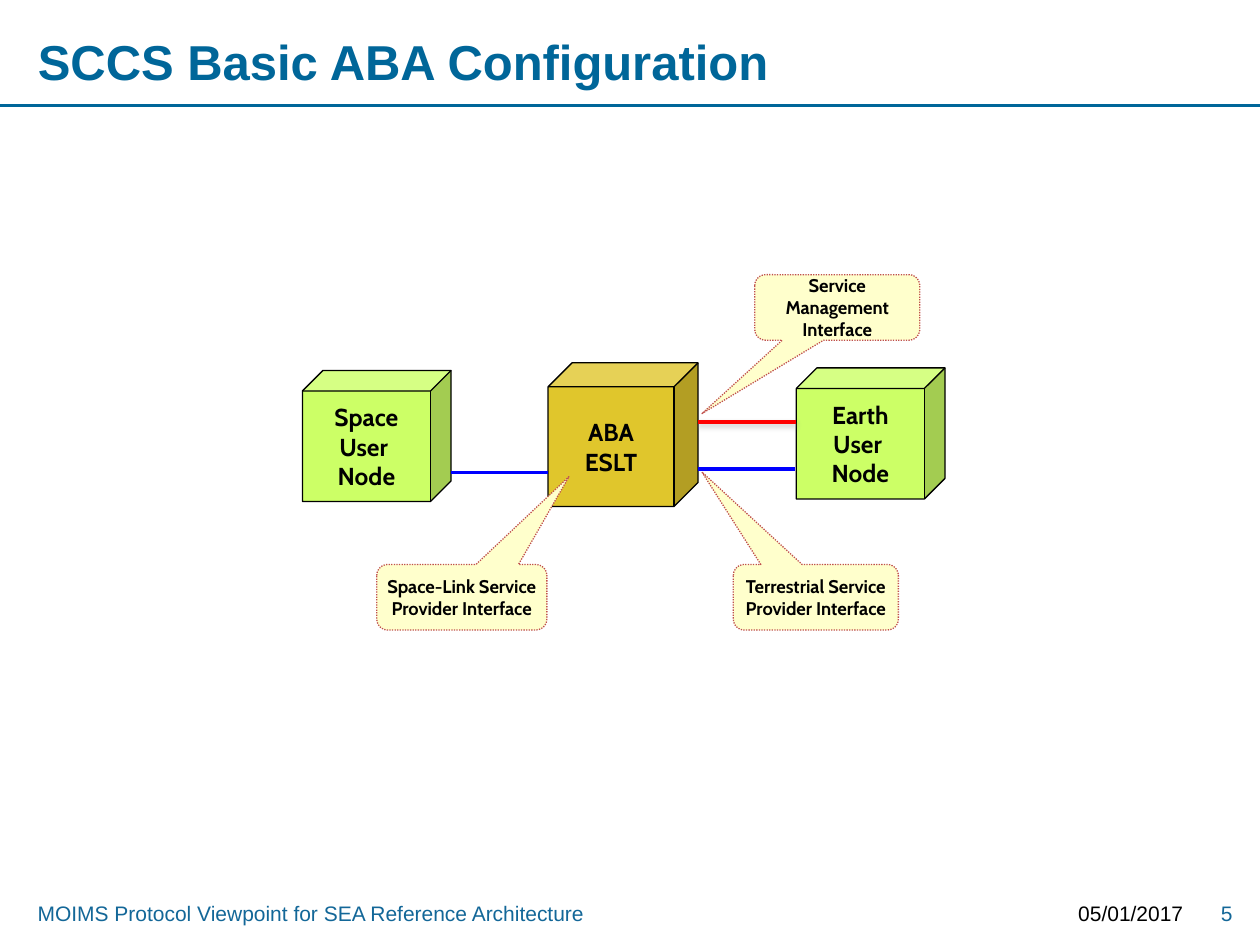
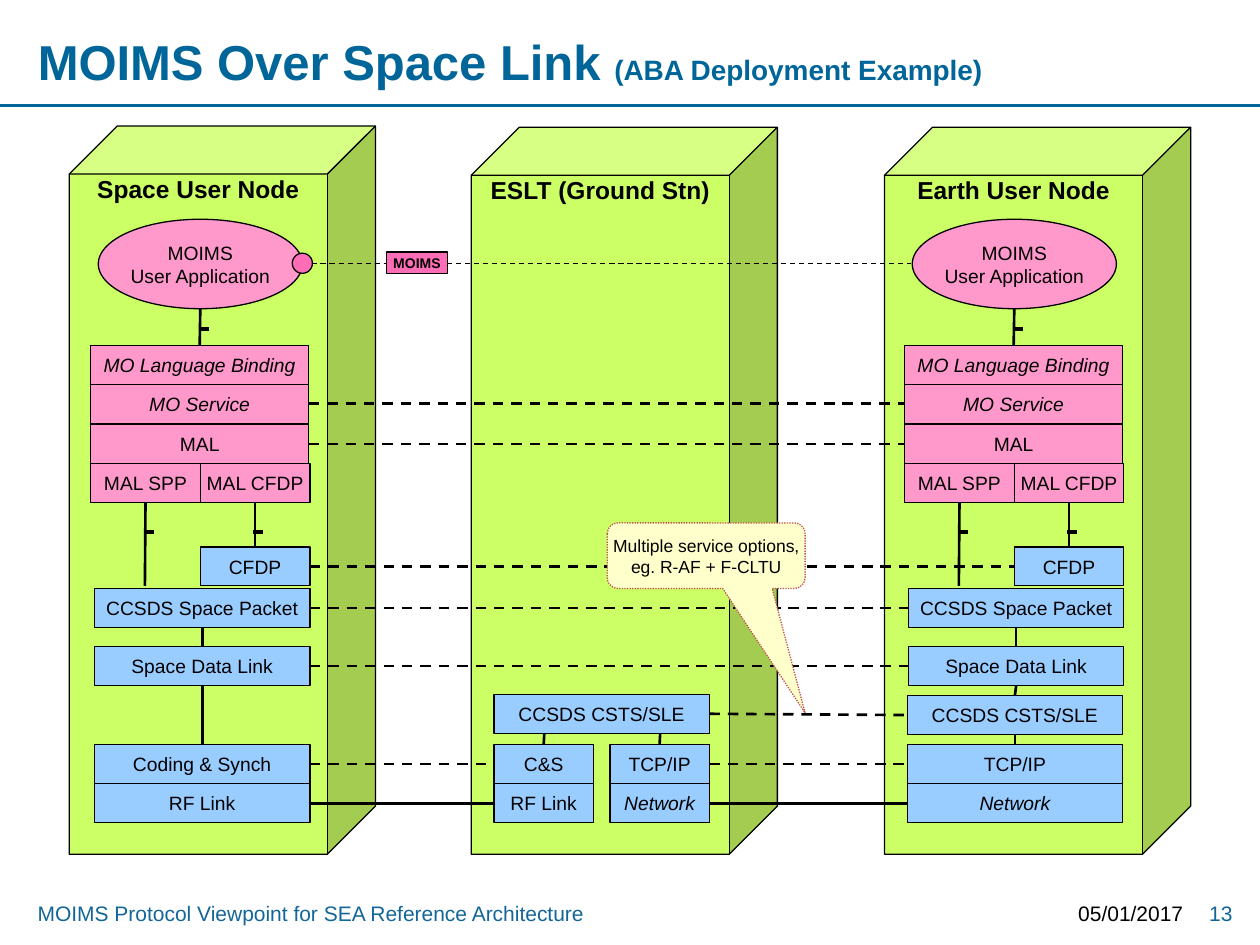
"""Build two slides on the ABA configuration and the MOIMS protocol stacks over a space link."""
from dataclasses import dataclass, replace
from typing import NamedTuple, Optional

from pptx import Presentation
from pptx.dml.color import RGBColor
from pptx.enum.dml import MSO_LINE as Dash
from pptx.enum.shapes import MSO_CONNECTOR, MSO_SHAPE as Preset
from pptx.enum.text import MSO_ANCHOR as Anchor, MSO_AUTO_SIZE as AutoSize, PP_ALIGN as Align
from pptx.oxml import parse_xml
from pptx.oxml.ns import nsdecls
from pptx.shapes.autoshape import Shape
from pptx.shapes.connector import Connector
from pptx.slide import Slide
from pptx.text.text import TextFrame
from pptx.util import Inches, Pt

COLORS = {
    "title": "006699", "footer": "136798", "ink": "000000", "lime": "CCFF66",
    "gold": "E0C62C", "pink": "FF99CC", "hot_pink": "FF6DB6", "sky": "99CCFF",
    "note": "FFFFCC", "note_line": "C0504D", "blue": "0000FF", "red": "FF0000",
}
TOP, LEFT, BOTTOM, RIGHT = range(4)
ROW = 0.31
FULL, LOWER, HALF, SMALL = 1.73, 1.71, 0.87, 0.79
EARTH_SHIFT = 6.46
RED_SHADOW = (
    '<a:outerShdw blurRad="39370" dist="20320" dir="5400000" rotWithShape="0">'
    '<a:srgbClr val="808080"><a:alpha val="38000"/></a:srgbClr></a:outerShdw>'
)


class Area(NamedTuple):
    left: float
    top: float
    width: float
    height: float


class Point(NamedTuple):
    x: float
    y: float


@dataclass(frozen=True)
class Font:
    size: float
    name: str = "Arial"
    color: str = "ink"
    bold: bool = False
    italic: bool = False


@dataclass(frozen=True)
class Pen:
    color: str = "ink"
    width: float = 1.5
    dash: Optional[Dash] = None


@dataclass(frozen=True)
class Look:
    preset: Preset
    fill: str
    font: Font
    pen: Pen = Pen(width=0.75)
    insets: tuple[float, float] = (0.1, 0.05)
    anchor: Anchor = Anchor.MIDDLE
    wrap: bool = True
    adjustments: tuple[float, ...] = ()


class Block(NamedTuple):
    label: str
    left: float
    top: float
    width: float
    fill: str = "sky"
    italic: bool = False


TITLE_FONT = Font(28, color="title", bold=True)
FOOTER_FONT = Font(12, color="footer")
CUBE = Look(Preset.CUBE, "lime", Font(14, "Cabin", bold=True), wrap=False, adjustments=(0.157,))
TOWER = replace(CUBE, font=Font(14, bold=True), insets=(0.1, 0), anchor=Anchor.TOP)
APPLICATION = Look(Preset.OVAL, "pink", Font(11), insets=(0, 0.05))
BLOCK = Look(Preset.RECTANGLE, "sky", Font(11), insets=(0.02, 0.02))
NOTE = Look(Preset.ROUNDED_RECTANGULAR_CALLOUT, "note", Font(10.5, "Cabin", bold=True),
            Pen("note_line", 0.75, Dash.ROUND_DOT), (0, 0))
SOLID = Pen()
DASHED = Pen(dash=Dash.DASH)
TICK = Pen(width=2.25)

USER_BLOCKS = (
    Block("MO Language Binding", 0.72, 2.74, FULL, "pink", True),
    Block("MO Service", 0.72, 3.05, FULL, "pink", True),
    Block("MAL", 0.72, 3.37, FULL, "pink"),
    Block("MAL SPP", 0.72, 3.68, HALF, "pink"),
    Block("MAL CFDP", 1.59, 3.68, HALF, "pink"),
    Block("CFDP", 1.59, 4.34, HALF),
    Block("CCSDS Space Packet", 0.75, 4.67, LOWER),
    Block("Space Data Link", 0.75, 5.13, LOWER),
)
SPACE_BLOCKS = (
    Block("Coding & Synch", 0.75, 5.91, LOWER),
    Block("RF Link", 0.75, 6.22, LOWER),
)
GROUND_BLOCKS = (
    Block("CCSDS CSTS/SLE", 3.92, 5.51, LOWER),
    Block("C&S", 3.92, 5.91, SMALL),
    Block("RF Link", 3.92, 6.22, SMALL),
    Block("TCP/IP", 4.84, 5.91, SMALL),
    Block("Network", 4.84, 6.22, SMALL, italic=True),
)
EARTH_BLOCKS = (
    Block("CCSDS CSTS/SLE", 7.2, 5.52, LOWER),
    Block("TCP/IP", 7.2, 5.91, LOWER),
    Block("Network", 7.2, 6.22, LOWER, italic=True),
)


def rgb(name: str) -> RGBColor:
    return RGBColor.from_string(COLORS[name])


def add_span(para, text: str, font: Font) -> None:
    span = para.add_run()
    span.text = text
    span.font.name, span.font.size = font.name, Pt(font.size)
    span.font.bold, span.font.italic = font.bold, font.italic
    span.font.color.rgb = rgb(font.color)


def write(frame: TextFrame, paragraphs: tuple[str, ...], font: Font, align: Align) -> None:
    for index, text in enumerate(paragraphs):
        para = frame.add_paragraph() if index else frame.paragraphs[0]
        para.alignment = align
        for number, line in enumerate(text.split("\n")):
            if number:
                para.add_line_break()
            add_span(para, line, font)


def apply_pen(line, pen: Pen) -> None:
    line.color.rgb = rgb(pen.color)
    line.width = Pt(pen.width)
    if pen.dash is not None:
        line.dash_style = pen.dash


def draw_shape(page: Slide, area: Area, look: Look, *paragraphs: str) -> Shape:
    shape = page.shapes.add_shape(look.preset, *map(Inches, area))
    shape.shadow.inherit = False
    shape.fill.solid()
    shape.fill.fore_color.rgb = rgb(look.fill)
    apply_pen(shape.line, look.pen)
    for index, value in enumerate(look.adjustments):
        shape.adjustments[index] = value
    frame = shape.text_frame
    frame.word_wrap, frame.vertical_anchor = look.wrap, look.anchor
    frame.margin_left = frame.margin_right = Inches(look.insets[0])
    frame.margin_top = frame.margin_bottom = Inches(look.insets[1])
    write(frame, paragraphs, look.font, Align.CENTER)
    return shape


def draw_note(page: Slide, area: Area, tip: Point, *paragraphs: str, font: Font = NOTE.font) -> None:
    look = replace(NOTE, font=font, adjustments=(tip.x, tip.y, 0.167))
    draw_shape(page, area, look, *paragraphs)


def draw_line(page: Slide, start: Point, end: Point, pen: Pen, effect: str = "") -> Connector:
    line = page.shapes.add_connector(MSO_CONNECTOR.STRAIGHT, *map(Inches, (*start, *end)))
    apply_pen(line.line, pen)
    effects = f'<a:effectLst {nsdecls("a")}>{effect}</a:effectLst>'
    line._element.spPr.append(parse_xml(effects))
    return line


def join(page: Slide, first: Shape, last: Shape, pen: Pen, sites: tuple[int, int]) -> None:
    line = draw_line(page, Point(0, 0), Point(1, 1), pen)
    line.begin_connect(first, sites[0])
    line.end_connect(last, sites[1])


def draw_footer(page: Slide, area: Area, text: str, font: Font, align: Align) -> None:
    box = page.shapes.add_textbox(*map(Inches, area))
    box.text_frame.word_wrap = True
    write(box.text_frame, (text,), font, align)


def start_page(deck, number: str, title: str, subtitle: str = "") -> Slide:
    page = deck.slides.add_slide(deck.slide_layouts[5])
    box = page.shapes.title
    box.left, box.top, box.width, box.height = map(Inches, (0.2, 0.21, 7.95, 0.55))
    frame = box.text_frame
    frame.word_wrap, frame.auto_size = True, AutoSize.NONE
    frame.vertical_anchor = Anchor.MIDDLE
    write(frame, (title,), TITLE_FONT, Align.LEFT)
    if subtitle:
        add_span(frame.paragraphs[0], subtitle, replace(TITLE_FONT, size=16))
    draw_line(page, Point(0, 0.84), Point(10, 0.84), Pen("title"))
    draw_footer(page, Area(0.2, 7.1, 8.11, 0.3),
                "MOIMS Protocol Viewpoint for SEA Reference Architecture", FOOTER_FONT, Align.LEFT)
    draw_footer(page, Area(8.39, 7.1, 1.1, 0.3), "05/01/2017", Font(12), Align.RIGHT)
    draw_footer(page, Area(9.41, 7.1, 0.47, 0.3), number, FOOTER_FONT, Align.RIGHT)
    return page


def build_configuration(deck) -> None:
    page = start_page(deck, "5", "SCCS Basic ABA Configuration")
    draw_shape(page, Area(2.4, 2.94, 1.18, 1.04), CUBE, "Space\nUser ", "Node")
    draw_shape(page, Area(4.35, 2.88, 1.19, 1.14),
               replace(CUBE, fill="gold", adjustments=(0.167,)), "ABA", "ESLT")
    draw_shape(page, Area(6.32, 2.92, 1.18, 1.04), CUBE, "Earth\nUser ", "Node")
    for left, y in ((3.58, 3.75), (5.54, 3.72)):
        draw_line(page, Point(left, y), Point(left + 0.77, y), Pen("blue", 2.25))
    draw_line(page, Point(6.32, 3.35), Point(5.54, 3.35), Pen("red", 2.25), RED_SHADOW)
    draw_note(page, Area(5.82, 4.48, 1.31, 0.52), Point(-0.69, -1.91),
              "Terrestrial Service Provider Interface")
    draw_note(page, Area(2.99, 4.48, 1.35, 0.52), Point(0.63, -1.84),
              "Space-Link Service Provider Interface")
    draw_note(page, Area(5.99, 2.18, 1.31, 0.52), Point(-0.82, 1.62),
              "Service", "Management", "Interface")


def draw_blocks(page: Slide, blocks: tuple[Block, ...], shift: float = 0) -> dict[str, Shape]:
    return {
        block.label: draw_shape(
            page, Area(block.left + shift, block.top, block.width, ROW),
            replace(BLOCK, fill=block.fill, font=Font(11, italic=block.italic)), block.label)
        for block in blocks
    }


def draw_user_stack(page: Slide, shift: float, lower: tuple[Block, ...]) -> dict[str, Shape]:
    draw_shape(page, Area(0.78 + shift, 1.74, 1.62, 0.71), APPLICATION, "MOIMS", "User Application")
    stack = draw_blocks(page, USER_BLOCKS, shift) | draw_blocks(page, lower)
    stem = draw_line(page, Point(1.59 + shift, 2.45), Point(1.59 + shift, 2.74), SOLID)
    stem.end_connect(stack["MO Language Binding"], TOP)
    stem = draw_line(page, Point(1.15 + shift, 3.99), Point(1.15 + shift, 4.65), SOLID)
    stem.begin_connect(stack["MAL SPP"], BOTTOM)
    chain = ("CCSDS Space Packet", "Space Data Link", *(block.label for block in lower[:-1]))
    for upper, under in (("MAL CFDP", "CFDP"), *zip(chain, chain[1:])):
        join(page, stack[upper], stack[under], SOLID, (BOTTOM, TOP))
    for x, y in ((1.58, 2.61), (1.14, 4.22), (2.01, 4.22)):
        draw_line(page, Point(x + shift, y), Point(x + shift + 0.08, y), TICK)
    return stack


def build_space_link(deck) -> None:
    page = start_page(deck, "13", "MOIMS Over Space Link ", "(ABA Deployment Example)")
    for left, top, label in ((0.55, 1, "Space User Node"), (3.74, 1.01, "ESLT (Ground Stn)"),
                             (7.02, 1.01, "Earth User Node")):
        draw_shape(page, Area(left, top, 2.43, 6.78 - top), TOWER, label)
    space = draw_user_stack(page, 0, SPACE_BLOCKS)
    earth = draw_user_stack(page, EARTH_SHIFT, EARTH_BLOCKS)
    ground = draw_blocks(page, GROUND_BLOCKS)
    for label, x in (("C&S", 4.32), ("TCP/IP", 5.24)):
        stem = draw_line(page, Point(x, 5.82), Point(x, 5.91), SOLID)
        stem.end_connect(ground[label], TOP)

    draw_line(page, Point(2.4, 2.09), Point(7.23, 2.09), Pen(width=0.75, dash=Dash.DASH))
    draw_shape(page, Area(2.32, 2.01, 0.16, 0.16), replace(APPLICATION, fill="hot_pink"))
    draw_shape(page, Area(3.07, 2, 0.48, 0.17),
               replace(BLOCK, fill="hot_pink", font=Font(8, bold=True)), "MOIMS")

    shared = ("MO Service", "MAL", "CFDP", "CCSDS Space Packet", "Space Data Link")
    links = [(space[label], earth[label], DASHED) for label in shared]
    links += [(ground[label], earth[label], DASHED) for label in ("CCSDS CSTS/SLE", "TCP/IP")]
    links += [
        (space["Coding & Synch"], ground["C&S"], DASHED),
        (space["RF Link"], ground["RF Link"], SOLID),
        (ground["Network"], earth["Network"], SOLID),
    ]
    for first, last, pen in links:
        join(page, first, last, pen, (RIGHT, LEFT))
    draw_note(page, Area(4.82, 4.15, 1.57, 0.52), Point(0.5, 2.4),
              "Multiple service options, eg. R-AF + F-CLTU", font=Font(10))


def main() -> None:
    deck = Presentation()
    deck.slide_width, deck.slide_height = Inches(10), Inches(7.5)
    build_configuration(deck)
    build_space_link(deck)
    deck.save("out.pptx")


if __name__ == "__main__":
    main()
